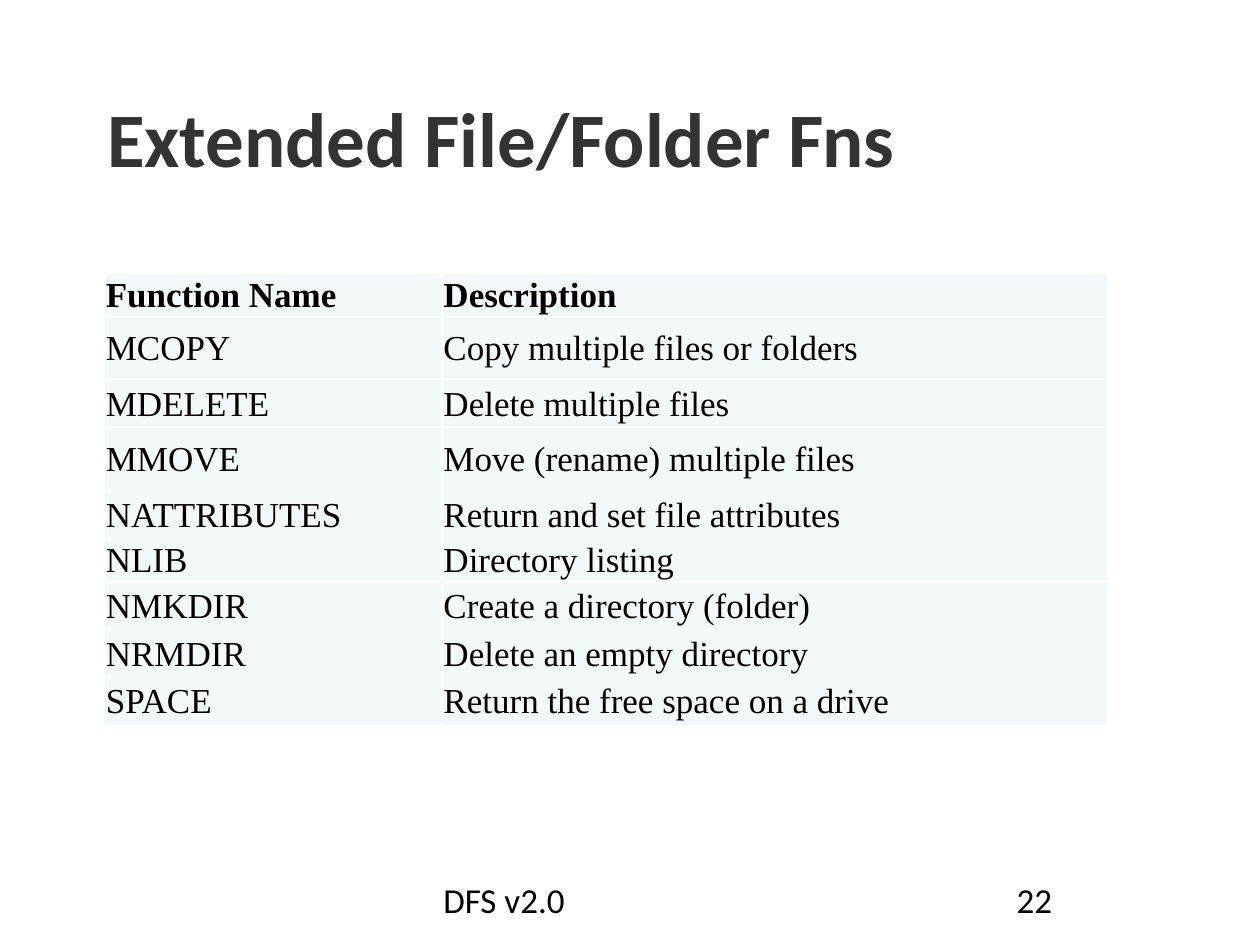
from lxml import etree
from pptx import Presentation
from pptx.dml.color import RGBColor
from pptx.enum import text
from pptx.oxml import ns
from pptx.util import Inches, Pt

# Content
TITLE = "Extended File/Folder Fns"
FOOTER = "DFS v2.0"
PAGE_NUMBER = "22"
HEADINGS = ("Function Name", "Description")
FUNCTIONS = [  # name, description, row height
    ("MCOPY", "Copy multiple files or folders", 0.5),
    ("MDELETE", "Delete multiple files", 0.38),
    ("MMOVE", "Move (rename) multiple files", 0.5),
    ("NATTRIBUTES", "Return and set file attributes", 0.38),
    ("NLIB", "Directory listing", 0.25),
    ("NMKDIR", "Create a directory (folder)", 0.38),
    ("NRMDIR", "Delete an empty directory", 0.38),
    ("SPACE", "Return the free space on a drive", 0.38),
]
ROWS = [(*HEADINGS, 0.25), *FUNCTIONS]
COLUMN_WIDTHS = (2.68, 5.28)

BLACK = RGBColor(0x00, 0x00, 0x00)
CHARCOAL = RGBColor(0x33, 0x33, 0x33)
PALE = RGBColor(0xF3, 0xF9, 0xFA)
BORDER = "FFFFFF"


def write(frame, words, font_name, size, color, bold=False,
          align=text.PP_ALIGN.LEFT):
    frame.text = words
    paragraph = frame.paragraphs[0]
    paragraph.alignment = align
    font = paragraph.runs[0].font
    font.name, font.size, font.bold = font_name, Pt(size), bold
    font.color.rgb = color


def add_borders(cell):
    properties = cell._tc.get_or_add_tcPr()
    for position, side in enumerate(("lnL", "lnR", "lnT", "lnB")):
        line = etree.Element(ns.qn(f"a:{side}"), w=str(Pt(1)))
        fill = etree.SubElement(line, ns.qn("a:solidFill"))
        etree.SubElement(fill, ns.qn("a:srgbClr"), val=BORDER)
        properties.insert(position, line)


deck = Presentation()
deck.slide_width, deck.slide_height = Inches(10), Inches(7.5)
slide = deck.slides.add_slide(deck.slide_layouts[5])

# Title
title = slide.shapes.title
title.left, title.top = Inches(0.75), Inches(0.67)
title.width, title.height = Inches(8.5), Inches(1.25)
write(title.text_frame, TITLE, "Calibri", 44, CHARCOAL, bold=True)
title.text_frame.vertical_anchor = text.MSO_ANCHOR.TOP

# Footer and page number
for words, left, width, align in (
    (FOOTER, 3.42, 3.17, text.PP_ALIGN.LEFT),
    (PAGE_NUMBER, 7.17, 2.08, text.PP_ALIGN.CENTER),
):
    note = slide.shapes.add_textbox(
        Inches(left), Inches(6.92), Inches(width), Inches(0.5))
    note.text_frame.word_wrap = True
    write(note.text_frame, words, "Calibri", 20, BLACK, align=align)

# Function table
functions = slide.shapes.add_table(
    len(ROWS), len(COLUMN_WIDTHS), Inches(0.83), Inches(2.17),
    Inches(sum(COLUMN_WIDTHS)), Inches(sum(row[-1] for row in ROWS))).table
functions.horz_banding = False
for column, width in zip(functions.columns, COLUMN_WIDTHS):
    column.width = Inches(width)
for index, (*entries, height) in enumerate(ROWS):
    functions.rows[index].height = Inches(height)
    for cell, words in zip(functions.rows[index].cells, entries):
        cell.margin_left = cell.margin_right = cell.margin_top = Inches(0.01)
        cell.margin_bottom = 0
        cell.vertical_anchor = text.MSO_ANCHOR.MIDDLE
        cell.fill.solid()
        cell.fill.fore_color.rgb = PALE
        add_borders(cell)
        write(cell.text_frame, words, "Times New Roman", 20, BLACK,
              bold=index == 0)

deck.save("out.pptx")
